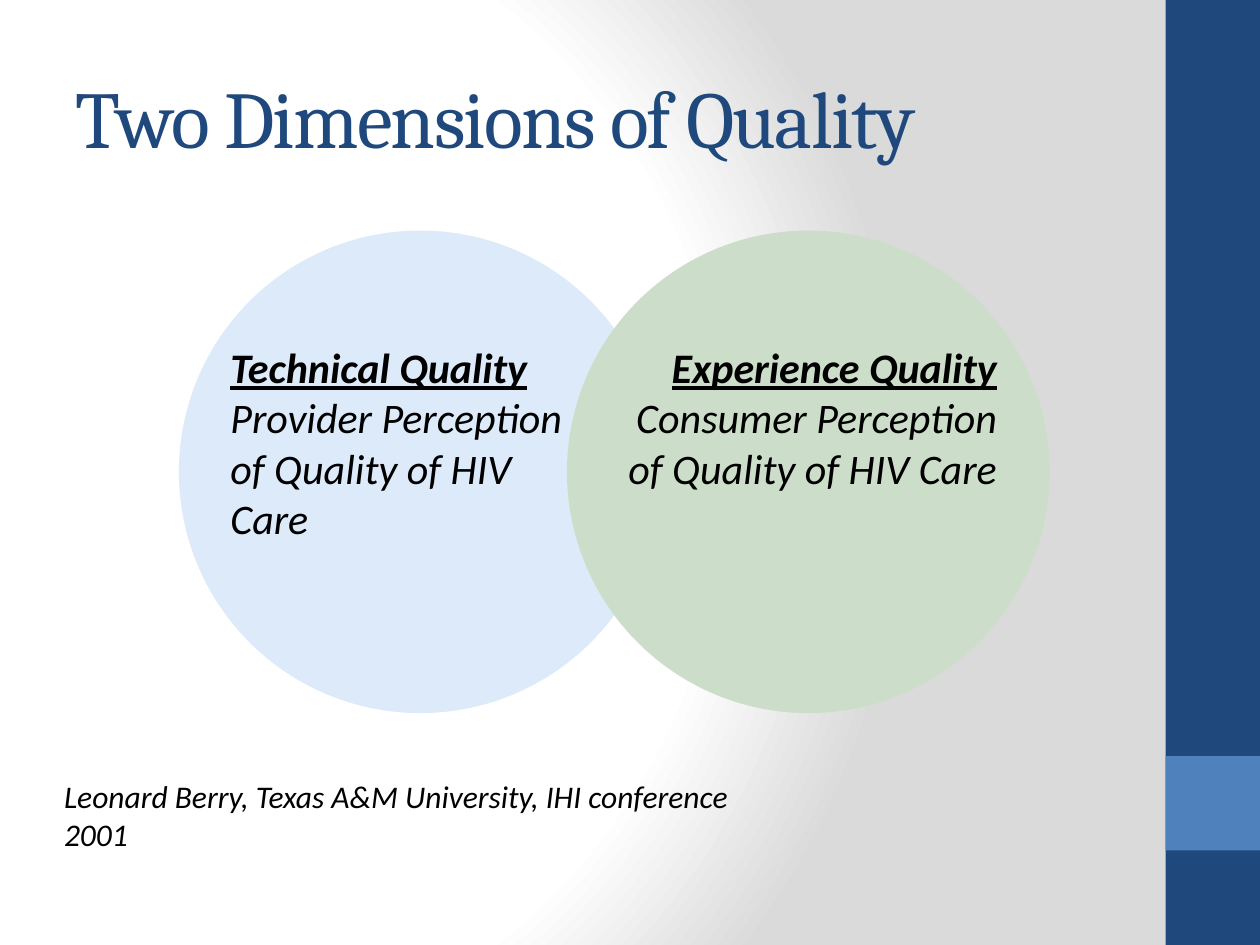
from pptx import Presentation
from pptx.dml.color import RGBColor
from pptx.enum.shapes import MSO_SHAPE
from pptx.enum.text import MSO_ANCHOR, PP_ALIGN
from pptx.oxml import parse_xml
from pptx.oxml.ns import nsdecls
from pptx.util import Inches, Pt

NAVY, BLUE, BLACK = "1F497D", "4F81BD", "000000"
STOPS = [(0, "FFFFFF"), (75, "FFFFFF"), (100, "DADADA")]


def color(value):
    return RGBColor.from_string(value)


def box(*lengths):
    return [Inches(v) for v in lengths]


def add_filled(s, kind, area, fill):
    sp = s.shapes.add_shape(kind, *box(*area))
    sp.shadow.inherit = False
    sp.fill.solid()
    sp.fill.fore_color.rgb = color(fill)
    sp.line.fill.background()
    return sp


def style(p, size, name="Calibri", fill=BLACK, italic=True, align=PP_ALIGN.LEFT):
    p.alignment = align
    p.font.size = Pt(size)
    p.font.name = name
    p.font.italic = italic
    p.font.color.rgb = color(fill)


def add_text(s, area, lines, size, align=PP_ALIGN.LEFT):
    tf = s.shapes.add_textbox(*box(*area)).text_frame
    tf.word_wrap = True
    tf.text = "\n".join(lines)
    for p in tf.paragraphs:
        style(p, size, align=align)
    return tf


def set_background(s):
    stops = "".join(
        f'<a:gs pos="{pos * 1000}"><a:srgbClr val="{value}"/></a:gs>'
        for pos, value in STOPS
    )
    bg = parse_xml(
        f'<p:bg {nsdecls("p", "a")}><p:bgPr><a:gradFill rotWithShape="1">'
        f'<a:gsLst>{stops}</a:gsLst><a:path path="circle">'
        '<a:fillToRect l="20000" t="50000" r="100000" b="50000"/></a:path>'
        '</a:gradFill><a:effectLst/></p:bgPr></p:bg>'
    )
    s.element.cSld.insert(0, bg)


def add_sidebar(s, left, top, width, height):
    add_filled(s, MSO_SHAPE.RECTANGLE, (left, top, width, height), NAVY)
    add_filled(s, MSO_SHAPE.RECTANGLE, (left, top + 0.8 * height, width, width), BLUE)


def add_title(s, area, text):
    sp = s.shapes.title
    sp.left, sp.top, sp.width, sp.height = box(*area)
    tf = sp.text_frame
    tf.vertical_anchor = MSO_ANCHOR.MIDDLE
    tf.text = text
    p = tf.paragraphs[0]
    style(p, 46, "Cambria", NAVY, italic=False)
    p.runs[0].font.element.set("spc", "-100") if hasattr(p.runs[0].font, "element") else p.runs[0]._r.get_or_add_rPr().set("spc", "-100")


def add_venn(s, left, top, diameter, step):
    dimensions = [
        ("DDEAF9", "Technical Quality", "Provider Perception of Quality of HIV Care",
         0.31, 2.86, PP_ALIGN.LEFT),
        ("CCDEC9", "Experience Quality", "Consumer Perception of Quality of HIV Care",
         0.33, 3.18, PP_ALIGN.RIGHT),
    ]
    for i, (fill, *_) in enumerate(dimensions):
        add_filled(s, MSO_SHAPE.OVAL, (left + i * step, top, diameter, diameter), fill)
    for i, (_, heading, detail, inset, width, align) in enumerate(dimensions):
        area = (left + i * step + inset, top + 0.83, width, 1.38)
        tf = add_text(s, area, [heading, detail], 24, align)
        tf.paragraphs[0].font.bold = True
        tf.paragraphs[0].font.underline = True


def main():
    prs = Presentation()
    prs.slide_width, prs.slide_height = box(10, 7.5)
    s = prs.slides.add_slide(prs.slide_layouts[5])
    set_background(s)
    add_sidebar(s, 9.25, 0, 0.75, 7.5)
    add_title(s, (0.5, 0.3, 8.33, 1.25), "Two Dimensions of Quality")
    add_venn(s, 1.42, 1.83, 3.83, 3.08)
    add_text(s, (0.41, 6.12, 5.52, 0.7),
             ["Leonard Berry, Texas A&M University, IHI conference 2001"], 18)
    prs.save("out.pptx")


if __name__ == "__main__":
    main()
